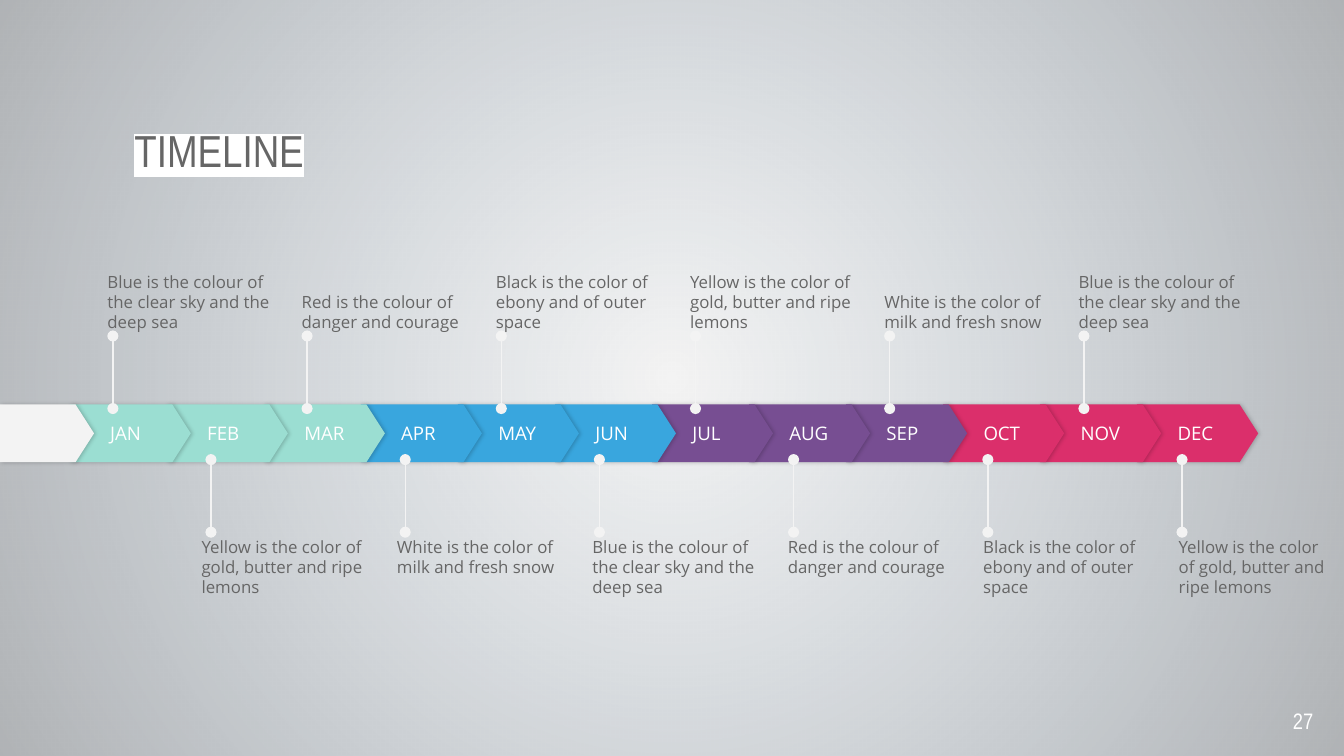
from dataclasses import dataclass

import lxml.etree
import pptx
import pptx.dml.color
import pptx.enum.shapes
import pptx.enum.text
import pptx.oxml
import pptx.oxml.ns
import pptx.util

Inches = pptx.util.Inches
RGBColor = pptx.dml.color.RGBColor
Anchor = pptx.enum.text.MSO_ANCHOR
Align = pptx.enum.text.PP_ALIGN
Shape = pptx.enum.shapes.MSO_SHAPE
qn = pptx.oxml.ns.qn

PALE = RGBColor(0xF3, 0xF3, 0xF3)
WHITE = RGBColor(0xFF, 0xFF, 0xFF)
GREY = RGBColor(0x66, 0x66, 0x66)
MINT = RGBColor(0x9B, 0xDE, 0xD2)
BLUE = RGBColor(0x39, 0xA6, 0xDE)
PLUM = RGBColor(0x77, 0x4E, 0x92)
PINK = RGBColor(0xDB, 0x2F, 0x6B)
NAVY = RGBColor(0x07, 0x37, 0x63)
INK = RGBColor(0x01, 0x0B, 0x15)
BLACK = RGBColor(0, 0, 0)

NS = 'xmlns:a="http://schemas.openxmlformats.org/drawingml/2006/main"'
WIDE = 10
HIGH = WIDE * 9 / 16
STEP = 0.7225
NOTE_W = 1.37
EDGE = 9.89

SKY = "Blue is the colour of the clear sky and the deep sea"
RED = "Red is the colour of danger and courage"
COAL = "Black is the color of ebony and of outer space"
GOLD = "Yellow is the color of gold, butter and ripe lemons"
MILK = "White is the color of milk and fresh snow"


@dataclass
class Month:
    name: str
    fill: RGBColor
    note: str


@dataclass
class Style:
    font: str
    size: float
    color: RGBColor
    inset: tuple = (0, 0, 0, 0)
    anchor: Anchor = Anchor.TOP
    align: Align = Align.LEFT


MONTHS = [
    Month("JAN", MINT, SKY), Month("FEB", MINT, GOLD), Month("MAR", MINT, RED),
    Month("APR", BLUE, MILK), Month("MAY", BLUE, COAL), Month("JUN", BLUE, SKY),
    Month("JUL", PLUM, GOLD), Month("AUG", PLUM, RED), Month("SEP", PLUM, MILK),
    Month("OCT", PINK, COAL), Month("NOV", PINK, SKY), Month("DEC", PINK, GOLD),
]
PAD = (0.1, 0.1, 0.1, 0.1)
HEAD = Style("Arial Narrow", 24, GREY, PAD)
PAGE = Style("Arial Narrow", 12, WHITE, PAD, align=Align.RIGHT)
LABEL = Style("Open Sans", 10, WHITE, (0.3, 0, 0, 0), Anchor.MIDDLE)
ABOVE = Style("Open Sans", 9, GREY, anchor=Anchor.BOTTOM)
BELOW = Style("Open Sans", 9, GREY)


def apply(item, values: dict) -> None:
    for name, value in values.items():
        setattr(item, name, value)


def box(*sides: float) -> list:
    return [Inches(side) for side in sides]


def write(shape, text: str, style: Style) -> None:
    left, top, right, bottom = box(*style.inset)
    frame = shape.text_frame
    apply(frame, {
        "text": text, "word_wrap": True, "vertical_anchor": style.anchor,
        "auto_size": pptx.enum.text.MSO_AUTO_SIZE.NONE,
        "margin_left": left, "margin_top": top,
        "margin_right": right, "margin_bottom": bottom,
    })
    line = frame.paragraphs[0]
    line.alignment = style.align
    font = line.runs[0].font
    apply(font, {"name": style.font, "size": pptx.util.Pt(style.size)})
    font.color.rgb = style.color


def add_text(slide, place: list, text: str, style: Style) -> None:
    write(slide.shapes.add_textbox(*place), text, style)


def add_glow(slide) -> None:
    glow = slide.shapes.add_shape(Shape.RECTANGLE, 0, 0, *box(WIDE, HIGH))
    glow.shadow.inherit = False
    glow.line.fill.background()
    grad = pptx.oxml.parse_xml(
        f'<a:gradFill {NS}><a:gsLst>'
        f'<a:gs pos="0"><a:srgbClr val="{NAVY}"><a:alpha val="0"/></a:srgbClr></a:gs>'
        f'<a:gs pos="100000"><a:srgbClr val="{INK}"><a:alpha val="28000"/></a:srgbClr></a:gs>'
        '</a:gsLst><a:path path="circle">'
        '<a:fillToRect l="50000" t="50000" r="50000" b="50000"/>'
        '</a:path></a:gradFill>')
    glow._element.spPr.find(qn("a:prstGeom")).addnext(grad)
    slide.slide_layout.shapes._spTree.insert(2, glow._element)


def add_arrow(slide, left: float, width: float, fill: RGBColor, text: str = "") -> None:
    arrow = slide.shapes.add_shape(Shape.PENTAGON, *box(left, 3.01, width, 0.43))
    arrow.adjustments[0] = 0.32
    arrow.fill.solid()
    arrow.fill.fore_color.rgb = fill
    arrow.line.fill.background()
    arrow._element.spPr.append(pptx.oxml.parse_xml(
        f'<a:effectLst {NS}><a:outerShdw blurRad="28575" dist="9525" dir="0" '
        f'algn="bl" rotWithShape="0"><a:srgbClr val="{BLACK}">'
        '<a:alpha val="20000"/></a:srgbClr></a:outerShdw></a:effectLst>'))
    if text:
        write(arrow, text, LABEL)


def add_pin(slide, x: float, start: float, end: float) -> None:
    pin = slide.shapes.add_connector(
        pptx.enum.shapes.MSO_CONNECTOR.STRAIGHT, *box(x, start, x, end))
    pin.line.color.rgb = PALE
    pin.line.width = pptx.util.Pt(0.75)
    for tag in ("a:headEnd", "a:tailEnd"):
        lxml.etree.SubElement(pin.line._ln, qn(tag), type="oval")
    lxml.etree.SubElement(pin._element.spPr, qn("a:effectLst"))


def add_title(slide) -> None:
    title = slide.shapes.title
    apply(title, dict(zip(("left", "top", "width", "height"), box(0.9, 0.81, 4.49, 0.77))))
    write(title, "TIMELINE", HEAD)
    props = title.text_frame.paragraphs[0].runs[0].font._element
    props.find(qn("a:solidFill")).addnext(pptx.oxml.parse_xml(
        f'<a:highlight {NS}><a:srgbClr val="{WHITE}"/></a:highlight>'))


def main() -> None:
    deck = pptx.Presentation()
    apply(deck, {"slide_width": Inches(WIDE), "slide_height": Inches(HIGH)})
    slide = deck.slides.add_slide(deck.slide_layouts[5])
    slide.background.fill.solid()
    slide.background.fill.fore_color.rgb = PALE

    add_glow(slide)
    add_title(slide)
    add_text(slide, box(9.27, 5.16, 0.6, 0.38), "27", PAGE)

    for i, month in reversed(list(enumerate(MONTHS))):
        add_arrow(slide, 0.52 + 0.722 * i, 0.9, month.fill, month.name)
    add_arrow(slide, 0, 0.7, PALE)

    for i, month in enumerate(MONTHS):
        if i % 2 == 0:
            add_pin(slide, 0.84 + STEP * i, 3.04, 2.5)
            add_text(slide, box(0.8 + STEP * i, 1.89, NOTE_W, 0.58), month.note, ABOVE)
        else:
            left = 1.5 + 0.727 * (i - 1)
            add_pin(slide, 1.57 + STEP * (i - 1), 3.96, 3.42)
            add_text(slide, box(left, 3.99, min(NOTE_W, EDGE - left), 0.58), month.note, BELOW)

    deck.save("out.pptx")


if __name__ == "__main__":
    main()
